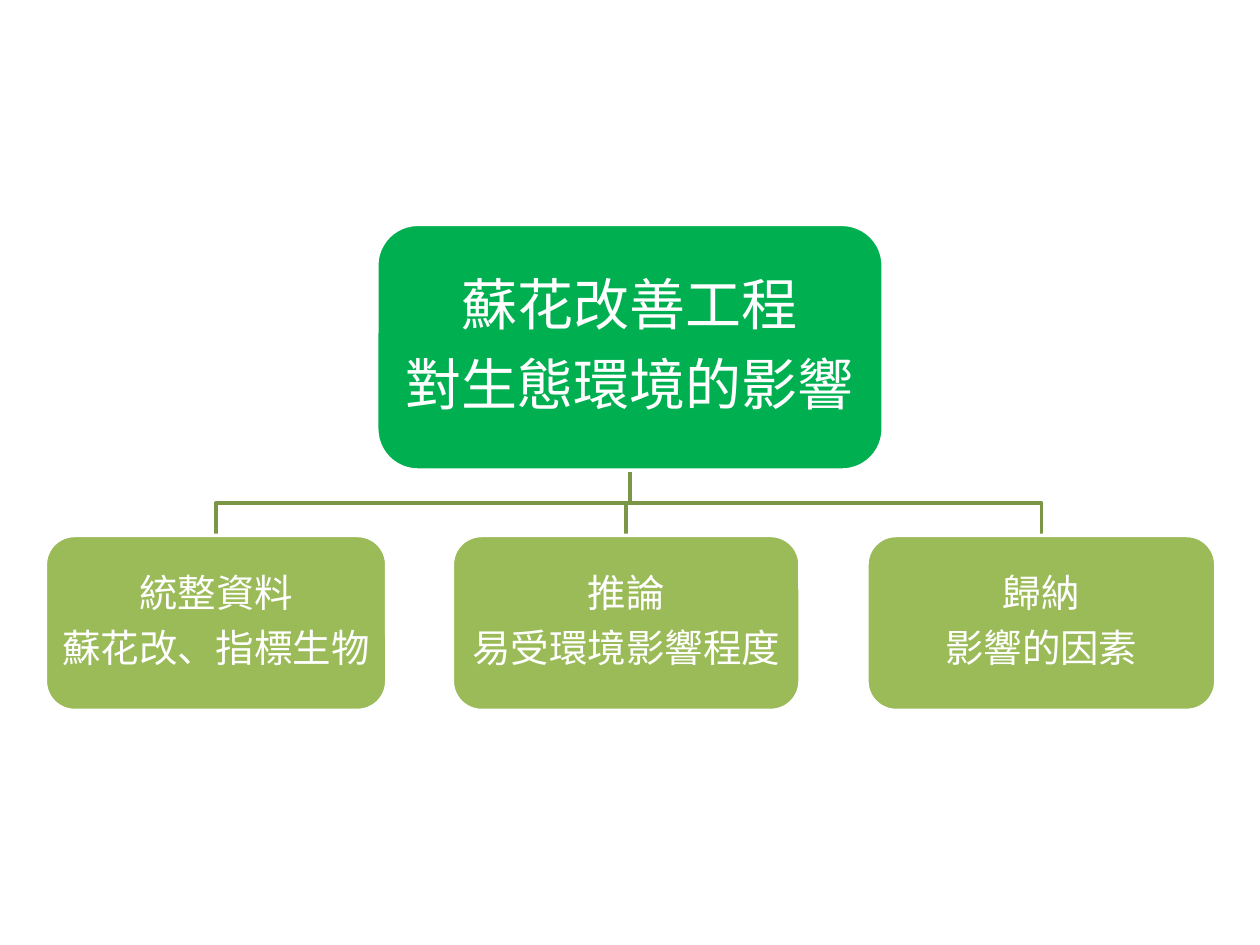
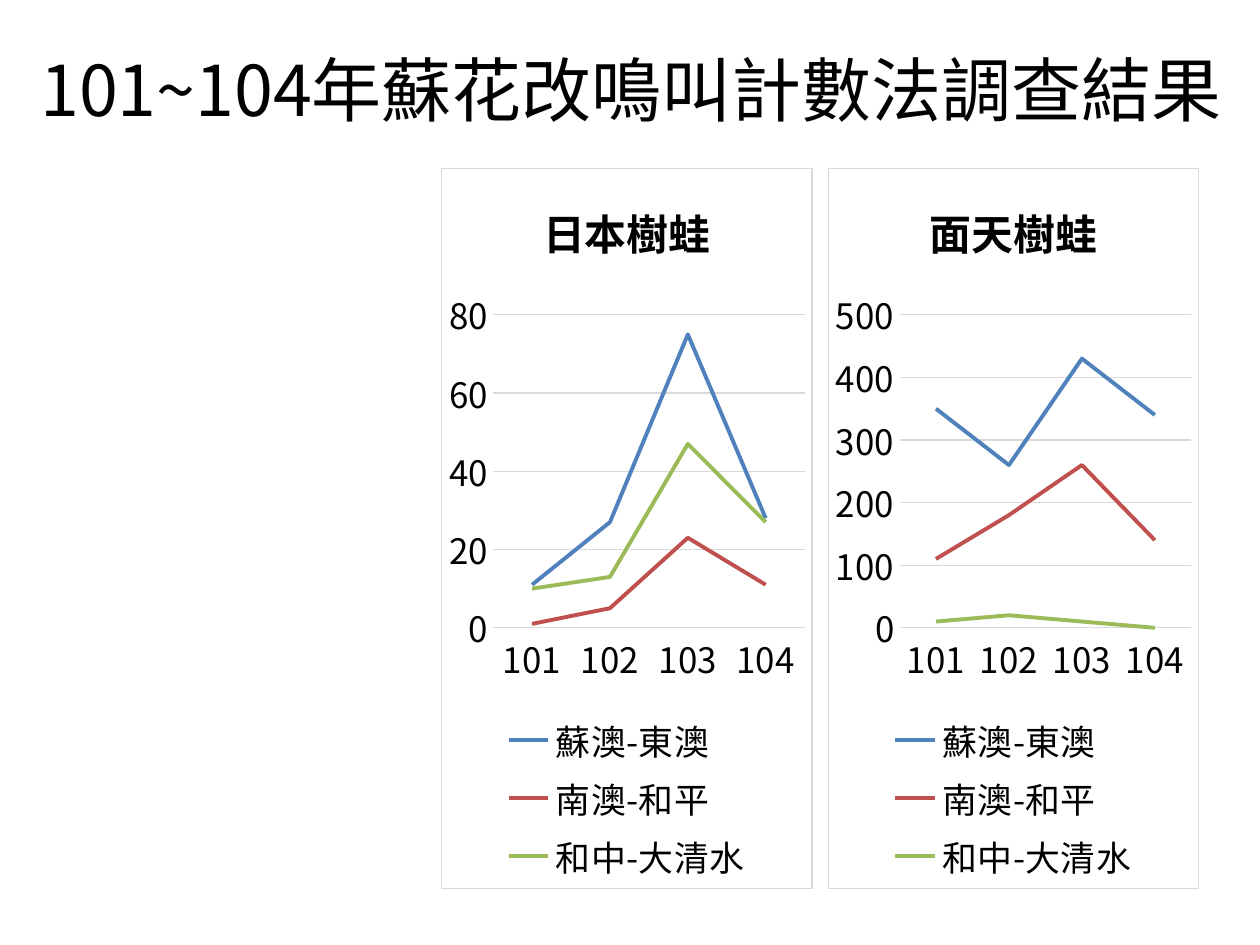
from dataclasses import dataclass

import pptx
import pptx.chart.data
import pptx.dml.color
import pptx.enum.chart
import pptx.enum.shapes
import pptx.enum.text
import pptx.oxml
import pptx.oxml.ns
import pptx.util
from lxml import etree

Pt = pptx.util.Pt
RGB = pptx.dml.color.RGBColor.from_string
qn = pptx.oxml.ns.qn


@dataclass(frozen=True)
class Theme:
    """Colours, font and type sizes shared by the slides."""
    font: str = "Noto Sans CJK SC"
    text: str = "000000"
    paper: str = "FFFFFF"
    root: str = "00B050"
    branch: str = "9BBB59"
    link: str = "7C9647"
    rule: str = "D9D9D9"
    series: tuple = ("4F81BD", "C0504D", "9BBB59")
    title_size: float = 40
    root_size: float = 32
    branch_size: float = 22
    chart_title_size: float = 24
    chart_size: float = 20


THEME = Theme()
ROOT = ["蘇花改善工程", "對生態環境的影響"]
BRANCHES = [
    (25.9, 195.1, ["統整資料", "蘇花改、指標生物"]),
    (258.5, 198.7, ["推論", "易受環境影響程度"]),
    (495.4, 199.4, ["歸納", "影響的因素"]),
]
YEARS = ["101", "102", "103", "104"]
SECTIONS = ["蘇澳-東澳", "南澳-和平", "和中-大清水"]
FROGS = [
    ("日本樹蛙", [(11, 27, 75, 28), (1, 5, 23, 11), (10, 13, 47, 27)]),
    ("面天樹蛙", [(350, 260, 430, 340), (110, 180, 260, 140), (10, 20, 10, 0)]),
]


def set_font(font, size, color, bold=None):
    """Apply size, colour and typeface, for Latin and East Asian text."""
    font.size, font.bold = Pt(size), bold
    font.color.rgb = RGB(color)
    font.name = THEME.font
    etree.SubElement(font._element, qn("a:ea"), typeface=THEME.font)


def set_line(line, color, width):
    """Give a line a solid colour and a width."""
    line.color.rgb = RGB(color)
    line.width = Pt(width)


def add_node(s, box, lines, fill, size):
    """Draw a rounded node with centred lines of text."""
    kind = pptx.enum.shapes.MSO_SHAPE.ROUNDED_RECTANGLE
    sp = s.shapes.add_shape(kind, *map(Pt, box))
    sp.shadow.inherit = False
    sp.fill.solid()
    sp.fill.fore_color.rgb = RGB(fill)
    set_line(sp.line, THEME.paper, 2)
    tf = sp.text_frame
    tf.word_wrap = True
    tf.vertical_anchor = pptx.enum.text.MSO_ANCHOR.MIDDLE
    tf.margin_left = tf.margin_right = tf.margin_top = tf.margin_bottom = Pt(1.4)
    tf.text = "\n".join(lines)
    for p in tf.paragraphs:
        p.alignment = pptx.enum.text.PP_ALIGN.CENTER
        p.line_spacing = 0.9
        p.space_after = Pt(0)
        after = p._p.pPr.find(qn("a:spcAft"))
        after.remove(after[0])
        etree.SubElement(after, qn("a:spcPct"), val="35000")
        set_font(p.font, size, THEME.paper)


def add_link(s, start, end):
    """Draw a stepped line that turns halfway down."""
    (x1, y1), (x2, y2) = start, end
    middle = (y1 + y2) / 2
    points = [(Pt(x), Pt(y)) for x, y in ((x1, middle), (x2, middle), (x2, y2))]
    builder = s.shapes.build_freeform(Pt(x1), Pt(y1))
    builder.add_line_segments(points, close=False)
    sp = builder.convert_to_shape()
    sp.shadow.inherit = False
    sp.fill.background()
    set_line(sp.line, THEME.link, 2)


def add_tree(s, box):
    """Place the root node, its links and its branches in a box."""
    left, top, width, height = box
    root_w, root_h, branch_h = 289.4, 140.4, 100
    center = left + width / 2
    branch_top = top + height - branch_h
    for x, w, _ in BRANCHES:
        add_link(s, (center, top + root_h), (left + x + w / 2, branch_top))
    add_node(s, (center - root_w / 2, top, root_w, root_h), ROOT,
             THEME.root, THEME.root_size)
    for x, w, lines in BRANCHES:
        add_node(s, (left + x, branch_top, w, branch_h), lines,
                 THEME.branch, THEME.branch_size)


def add_title(s, box, text):
    """Add the centred slide title."""
    tf = s.shapes.add_textbox(*map(Pt, box)).text_frame
    tf.word_wrap = True
    tf.vertical_anchor = pptx.enum.text.MSO_ANCHOR.MIDDLE
    p = tf.paragraphs[0]
    p.text = text
    p.alignment = pptx.enum.text.PP_ALIGN.CENTER
    set_font(p.font, THEME.title_size, THEME.text)


def frame_chart(chart):
    """Fill the chart area and outline it."""
    fill = '<a:solidFill><a:srgbClr val="{}"/></a:solidFill>'
    xml = (f'<c:spPr {pptx.oxml.ns.nsdecls("c", "a")}>{fill.format(THEME.paper)}'
           f'<a:ln w="{Pt(0.75)}">{fill.format(THEME.rule)}</a:ln></c:spPr>')
    chart._chartSpace.find(qn("c:chart")).addnext(pptx.oxml.parse_xml(xml))


def add_line_chart(s, box, title, rows):
    """Add a framed line chart with one line per road section."""
    data = pptx.chart.data.CategoryChartData()
    data.categories = YEARS
    for name, values in zip(SECTIONS, rows):
        data.add_series(name, values)
    kind = pptx.enum.chart.XL_CHART_TYPE.LINE
    chart = s.shapes.add_chart(kind, *map(Pt, box), data).chart
    set_font(chart.font, THEME.chart_size, THEME.text)
    frame_chart(chart)
    chart.has_title = True
    p = chart.chart_title.text_frame.paragraphs[0]
    p.text = title
    set_font(p.font, THEME.chart_title_size, THEME.text, True)
    chart.chart_title.include_in_layout = False
    chart.has_legend = True
    chart.legend.position = pptx.enum.chart.XL_LEGEND_POSITION.BOTTOM
    chart.legend.include_in_layout = False
    for axis in (chart.category_axis, chart.value_axis):
        axis.major_tick_mark = pptx.enum.chart.XL_TICK_MARK.NONE
        axis.minor_tick_mark = pptx.enum.chart.XL_TICK_MARK.NONE
    set_line(chart.category_axis.format.line, THEME.rule, 0.75)
    chart.value_axis.format.line.fill.background()
    set_line(chart.value_axis.major_gridlines.format.line, THEME.rule, 0.75)
    chart.plots[0].vary_by_categories = False
    for series, color in zip(chart.plots[0].series, THEME.series):
        series.smooth = False
        series.marker.style = pptx.enum.chart.XL_MARKER_STYLE.NONE
        set_line(series.format.line, color, 2.25)


def add_charts(s, box, gap):
    """Share a box equally between the frog charts."""
    left, top, width, height = box
    w = (width - gap * (len(FROGS) - 1)) / len(FROGS)
    for i, (title, rows) in enumerate(FROGS):
        add_line_chart(s, (left + i * (w + gap), top, w, height), title, rows)


def main():
    """Build both slides and save them."""
    prs = pptx.Presentation()
    prs.slide_width, prs.slide_height = Pt(720), Pt(540)
    blank = prs.slide_layouts[6]
    add_tree(prs.slides.add_slide(blank), (0, 128.2, 720, 277.8))
    s = prs.slides.add_slide(blank)
    add_title(s, (11.5, 0, 697.7, 101.5), "101~104年蘇花改鳴叫計數法調查結果")
    add_charts(s, (252, 95.8, 433.4, 412.5), 8.6)
    prs.save("out.pptx")


if __name__ == "__main__":
    main()
